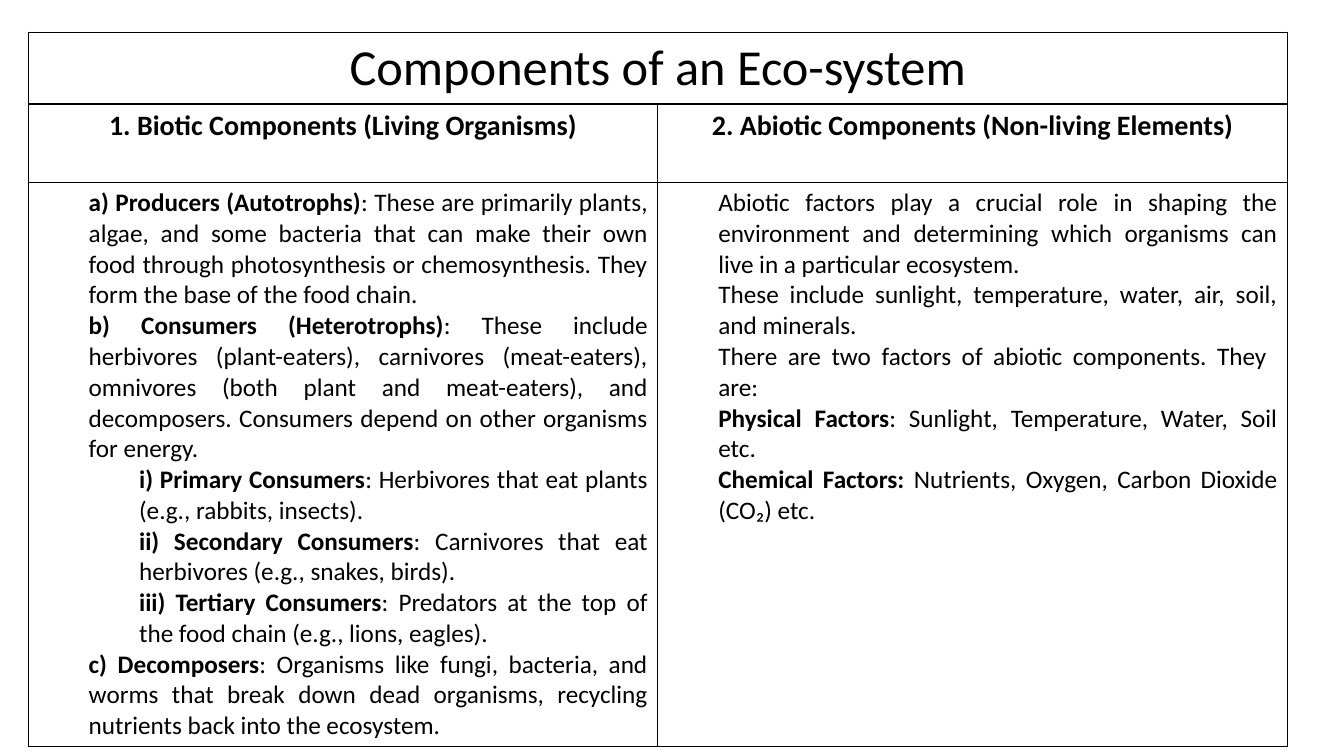
from lxml import etree
from pptx import Presentation
from pptx.dml.color import RGBColor
from pptx.enum.text import PP_ALIGN
from pptx.oxml.ns import qn
from pptx.util import Inches, Pt

CENTER, JUSTIFY = PP_ALIGN.CENTER, PP_ALIGN.JUSTIFY
BLACK = RGBColor(0x00, 0x00, 0x00)
WHITE = RGBColor(0xFF, 0xFF, 0xFF)
FONT = "Calibri"

COL_WIDTH = 6.245
ROW_HEIGHTS = [0.71, 0.78, 5.59]
INDENT = 0.5

TITLE = "Components of an Eco-system"
HEADINGS = [
    "1. Biotic Components (Living Organisms)",
    "2. Abiotic Components (Non-living Elements)",
]

# Each paragraph: indent level, bold lead, plain text
BIOTIC = [
    (1, "a) Producers (Autotrophs)",
     ": These are primarily plants, algae, and some bacteria that can make "
     "their own food through photosynthesis or chemosynthesis. They form the "
     "base of the food chain."),
    (1, "b) Consumers (Heterotrophs)",
     ": These include herbivores (plant-eaters), carnivores (meat-eaters), "
     "omnivores (both plant and meat-eaters), and decomposers. Consumers "
     "depend on other organisms for energy."),
    (2, "i) Primary Consumers",
     ": Herbivores that eat plants (e.g., rabbits, insects)."),
    (2, "ii) Secondary Consumers",
     ": Carnivores that eat herbivores (e.g., snakes, birds)."),
    (2, "iii) Tertiary Consumers",
     ": Predators at the top of the food chain (e.g., lions, eagles)."),
    (1, "c) Decomposers",
     ": Organisms like fungi, bacteria, and worms that break down dead "
     "organisms, recycling nutrients back into the ecosystem."),
]
ABIOTIC = [
    (1, "", "Abiotic factors play a crucial role in shaping the environment "
            "and determining which organisms can live in a particular ecosystem."),
    (1, "", "These include sunlight, temperature, water, air, soil, and minerals."),
    (1, "", "There are two factors of abiotic components. They  are:"),
    (1, "Physical Factors", ": Sunlight, Temperature, Water, Soil etc."),
    (1, "Chemical Factors: ", "Nutrients, Oxygen, Carbon Dioxide (CO₂) etc."),
]


def add_run(p, text, size, bold=False):
    r = p.add_run()
    r.text = text
    style = {"name": FONT, "size": Pt(size), "bold": bold}
    for key, value in style.items():
        setattr(r.font, key, value)
    r.font.color.rgb = BLACK


def format_cell(cell):
    """Give a cell thin black borders and a white fill."""
    tc_pr = cell._tc.get_or_add_tcPr()
    for side in ("a:lnL", "a:lnR", "a:lnT", "a:lnB"):
        ln = etree.SubElement(tc_pr, qn(side), w=str(Pt(1)))
        fill = etree.SubElement(ln, qn("a:solidFill"))
        etree.SubElement(fill, qn("a:srgbClr"), val=str(BLACK))
    cell.fill.solid()
    cell.fill.fore_color.rgb = WHITE


def write_heading(cell, text, size, bold):
    p = cell.text_frame.paragraphs[0]
    p.alignment = CENTER
    add_run(p, text, size, bold)


def write_body(cell, paragraphs):
    tf = cell.text_frame
    for i, (level, lead, text) in enumerate(paragraphs):
        p = tf.add_paragraph() if i else tf.paragraphs[0]
        p.alignment = JUSTIFY
        p.level = level
        p_pr = p._p.get_or_add_pPr()
        p_pr.set("marL", str(Inches(INDENT * level)))
        p_pr.set("indent", "0")
        if lead:
            add_run(p, lead, 18, True)
        add_run(p, text, 18)


def add_component_table(s):
    height = Inches(sum(ROW_HEIGHTS))
    table = s.shapes.add_table(3, 2, Inches(0.28), Inches(0.32),
                               Inches(2 * COL_WIDTH), height).table
    table.first_row = False
    table.horz_banding = False
    for col in table.columns:
        col.width = Inches(COL_WIDTH)
    for row, row_height in zip(table.rows, ROW_HEIGHTS):
        row.height = Inches(row_height)
    for cell in table.iter_cells():
        format_cell(cell)
    return table


def main():
    prs = Presentation()
    prs.slide_width, prs.slide_height = Inches(13.33), Inches(7.5)
    s = prs.slides.add_slide(prs.slide_layouts[6])
    table = add_component_table(s)

    # Title across both columns
    table.cell(0, 0).merge(table.cell(0, 1))
    write_heading(table.cell(0, 0), TITLE, 36, False)

    # Heading and body of each column
    for col, (heading, body) in enumerate(zip(HEADINGS, (BIOTIC, ABIOTIC))):
        write_heading(table.cell(1, col), heading, 20, True)
        write_body(table.cell(2, col), body)

    prs.save("out.pptx")


if __name__ == "__main__":
    main()
